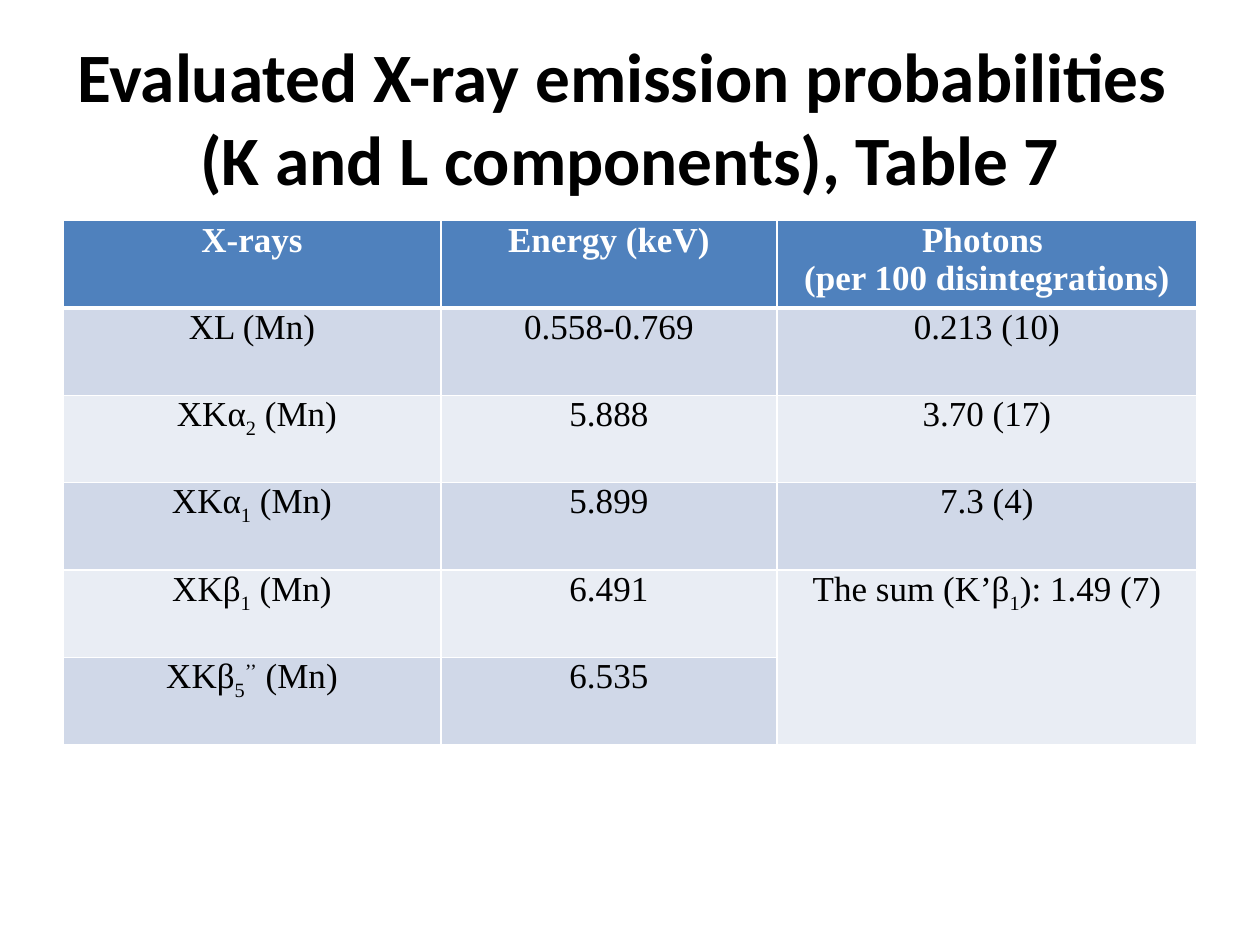
from lxml import etree
from pptx import Presentation
from pptx.dml.color import RGBColor
from pptx.enum.text import MSO_ANCHOR, MSO_AUTO_SIZE, PP_ALIGN
from pptx.oxml.ns import qn
from pptx.util import Cm, Pt

CENTER = PP_ALIGN.CENTER
MIDDLE = MSO_ANCHOR.MIDDLE
TOP = MSO_ANCHOR.TOP
NO_AUTOFIT = MSO_AUTO_SIZE.NONE
TITLE_ONLY = 5
SUB, SUPER = -25000, 30000

TITLE = ["Evaluated X-ray emission probabilities ", "(K and L components), Table 7"]
HEADINGS = [["X-rays"], ["Energy (keV)"], ["Photons ", "(per 100 disintegrations)"]]
XRAYS = [
    (["XL (Mn)"], "0.558-0.769", ["0.213 (10)"]),
    (["XKα", ("2", SUB), " (Mn)"], "5.888", ["3.70 (17)"]),
    (["XKα", ("1", SUB), " (Mn)"], "5.899", ["7.3 (4)"]),
    (["XKβ", ("1", SUB), " (Mn)"], "6.491", ["The sum (K’β", ("1", SUB), "): 1.49 (7)"]),
    (["XKβ", ("5", SUB), ("’’", SUPER), " (Mn)"], "6.535", None),
]
INDENTED_CELL = (2, 0)
SUM_ROWS = (4, 5)

THEME = {
    "title_font": "Calibri", "title_size": Pt(39.6),
    "table_font": "Times New Roman", "table_size": Pt(20),
    "ink": "000000", "paper": "FFFFFF",
    "header": "4F81BD", "bands": ["D0D8E8", "E9EDF4"],
    "rule": Pt(1), "header_rule": Pt(3),
}

TITLE_BOX = (Cm(1.27), Cm(0.76), Cm(22.86), Cm(3.18))
TABLE_LEFT, TABLE_TOP = Cm(1.27), Cm(4.45)
COLUMN_WIDTHS = [Cm(7.62), Cm(6.77), Cm(8.47)]
ROW_HEIGHT = Cm(1.76)
CELL_INSET = Cm(0.18)
EXTRA_INDENT = Cm(0.2)


def add_span(para, text, font, size, color, bold, baseline=0):
    span = para.add_run()
    span.text = text
    span.font.name = font
    span.font.size = size
    span.font.bold = bold
    span.font.color.rgb = RGBColor.from_string(color)
    if baseline:
        span.font._element.set("baseline", str(baseline))


def add_borders(cell, row):
    properties = cell._tc.get_or_add_tcPr()
    for side in ("L", "R", "T", "B"):
        under_header = (row, side) in ((0, "B"), (1, "T"))
        width = THEME["header_rule" if under_header else "rule"]
        line = etree.SubElement(properties, qn(f"a:ln{side}"), w=str(width))
        fill = etree.SubElement(line, qn("a:solidFill"))
        etree.SubElement(fill, qn("a:srgbClr"), val=THEME["paper"])


def style_cell(cell, row):
    cell.margin_left = cell.margin_right = CELL_INSET
    cell.margin_top = cell.margin_bottom = 0
    cell.vertical_anchor = TOP
    add_borders(cell, row)
    color = THEME["bands"][(row - 1) % 2] if row else THEME["header"]
    cell.fill.solid()
    cell.fill.fore_color.rgb = RGBColor.from_string(color)


def write_cell(cell, paragraphs, header):
    frame = cell.text_frame
    color = THEME["paper" if header else "ink"]
    for index, spans in enumerate(paragraphs):
        para = frame.add_paragraph() if index else frame.paragraphs[0]
        para.alignment = CENTER
        for span in spans:
            text, baseline = (span, 0) if isinstance(span, str) else span
            add_span(para, text, THEME["table_font"], THEME["table_size"],
                     color, header, baseline)


def add_title(page):
    box = page.shapes.title
    box.left, box.top, box.width, box.height = TITLE_BOX
    frame = box.text_frame
    frame.word_wrap = True
    frame.auto_size = NO_AUTOFIT
    frame.vertical_anchor = MIDDLE
    para = frame.paragraphs[0]
    para.alignment = CENTER
    for index, text in enumerate(TITLE):
        if index:
            para.add_line_break()
        add_span(para, text, THEME["title_font"], THEME["title_size"], THEME["ink"], True)


def add_xray_table(page):
    rows = [[[[line] for line in heading] for heading in HEADINGS]]
    for name, energy, photons in XRAYS:
        rows.append([[name], [[energy]], [photons] if photons else []])
    table = page.shapes.add_table(
        len(rows), len(COLUMN_WIDTHS), TABLE_LEFT, TABLE_TOP,
        sum(COLUMN_WIDTHS), ROW_HEIGHT * len(rows)).table
    table.horz_banding = False
    for column, width in zip(table.columns, COLUMN_WIDTHS):
        column.width = width
    for row, contents in enumerate(rows):
        table.rows[row].height = ROW_HEIGHT
        for column, paragraphs in enumerate(contents):
            cell = table.cell(row, column)
            style_cell(cell, row)
            write_cell(cell, paragraphs, row == 0)
    indented = table.cell(*INDENTED_CELL).text_frame.paragraphs[0]
    indented._p.get_or_add_pPr().set("indent", str(EXTRA_INDENT))
    first, last = SUM_ROWS
    table.cell(first, 2).merge(table.cell(last, 2))


def main():
    deck = Presentation()
    deck.slide_width, deck.slide_height = Cm(25.4), Cm(19.05)
    page = deck.slides.add_slide(deck.slide_layouts[TITLE_ONLY])
    add_title(page)
    add_xray_table(page)
    deck.save("out.pptx")


if __name__ == "__main__":
    main()
